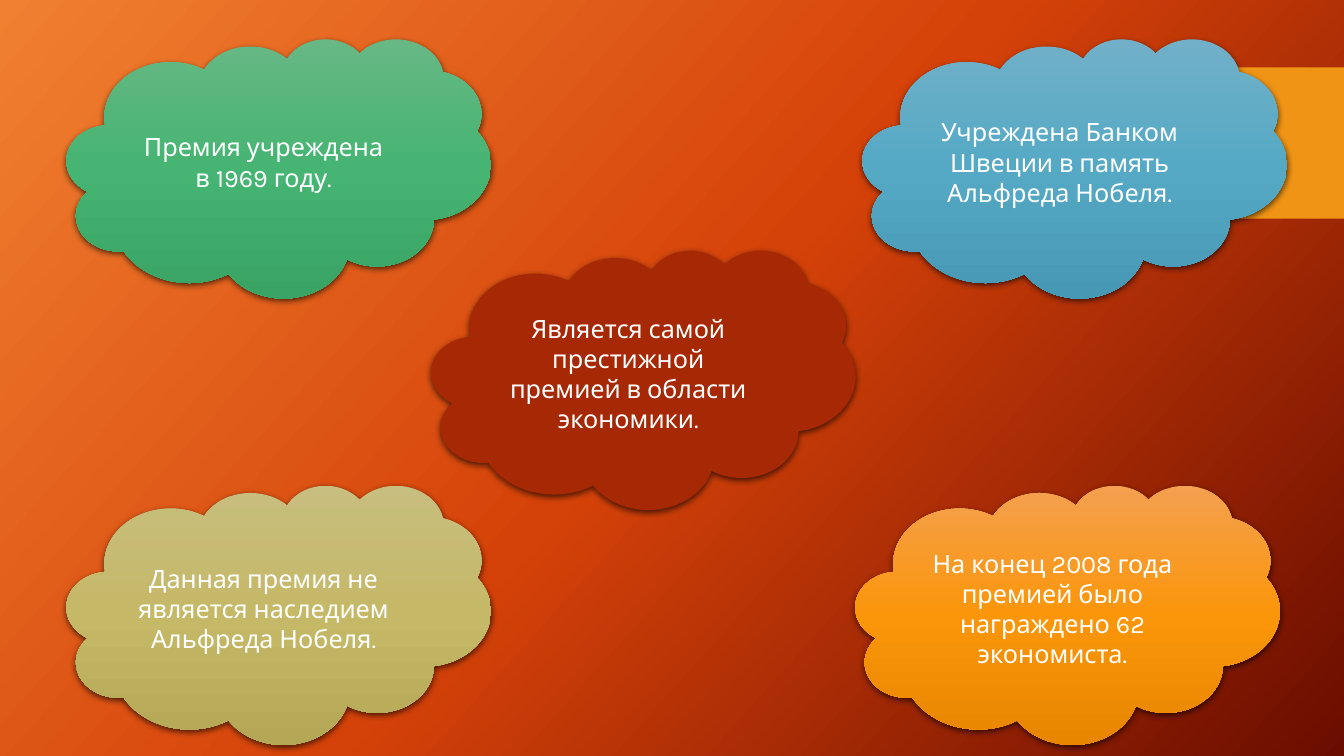
from copy import deepcopy
from dataclasses import dataclass

from lxml.etree import SubElement
from pptx import Presentation
from pptx.dml.color import RGBColor
from pptx.dml.fill import FillFormat
from pptx.enum.shapes import MSO_SHAPE
from pptx.enum.text import MSO_ANCHOR, PP_ALIGN
from pptx.oxml.ns import qn
from pptx.shapes.autoshape import Shape
from pptx.slide import Slide
from pptx.util import Cm, Pt


@dataclass(frozen=True)
class Theme:
    font: str = "Karla"
    size: int = 18
    text: str = "FFFFFF"
    shade: str = "000000"
    tab: str = "F09415"
    back: tuple[str, ...] = ("F18031", "D54209", "6A0D00")
    orange: tuple[str, ...] = ("F4A050", "FB960A", "E88600")
    sand: tuple[str, ...] = ("C8BE7F", "C5B867", "B4A756")
    blue: tuple[str, ...] = ("71B0C8", "55A9C5", "4798B4")
    green: tuple[str, ...] = ("67B884", "46B472", "3AA464")
    red: tuple[str, ...] = ("A62805",)


@dataclass(frozen=True)
class Cloud:
    left: float
    top: float
    fill: tuple[str, ...]
    text: str


THEME = Theme()
WIDE, HIGH = 10.69, 6.53  # cloud size in cm
LEFT, UPPER, LOWER = 1.68, 0.97, 12.22

CLOUDS = (
    Cloud(21.56, LOWER, THEME.orange,
          "На конец 2008 года премией было награждено 62 экономиста."),
    Cloud(LEFT, LOWER, THEME.sand,
          "Данная премия не является наследием Альфреда Нобеля."),
    Cloud(21.74, UPPER, THEME.blue,
          "Учреждена Банком Швеции в память Альфреда Нобеля."),
    Cloud(LEFT, UPPER, THEME.green, "Премия учреждена в 1969 году."),
    Cloud(10.87, 6.3, THEME.red,
          "Является самой престижной премией в области экономики."),
)


def paint(fill: FillFormat, tones: tuple[str, ...], angle: int = 90) -> None:
    """Fill with one tone, or with three tones along a clockwise angle."""
    if len(tones) == 1:
        fill.solid()
        fill.fore_color.rgb = RGBColor.from_string(tones[0])
        return
    fill.gradient()
    fill.gradient_angle = 360 - angle
    first = fill.gradient_stops[0]._gs
    first.addnext(deepcopy(first))
    for stop, tone, place in zip(fill.gradient_stops, tones, (0, 0.5, 1)):
        stop.color.rgb = RGBColor.from_string(tone)
        stop.position = place


def shade(shape: Shape) -> None:
    """Give the shape a soft shadow straight below it."""
    effects = shape._element.spPr.find(qn("a:effectLst"))
    outer = SubElement(effects, qn("a:outerShdw"), blurRad=str(Pt(4.5)),
                       dist=str(Pt(1.5)), dir="5400000", algn="ctr",
                       rotWithShape="0")
    tone = SubElement(outer, qn("a:srgbClr"), val=THEME.shade)
    SubElement(tone, qn("a:alpha"), val="63000")


def add_form(slide: Slide, kind: MSO_SHAPE, left: float, top: float,
             wide: float, high: float, tones: tuple[str, ...]) -> Shape:
    shape = slide.shapes.add_shape(kind, Cm(left), Cm(top), Cm(wide), Cm(high))
    shape.shadow.inherit = False
    shape.line.fill.background()
    paint(shape.fill, tones)
    return shape


def add_cloud(slide: Slide, cloud: Cloud) -> None:
    shape = add_form(slide, MSO_SHAPE.CLOUD, cloud.left, cloud.top,
                     WIDE, HIGH, cloud.fill)
    shade(shape)
    frame = shape.text_frame
    frame.word_wrap = True
    frame.vertical_anchor = MSO_ANCHOR.MIDDLE
    para = frame.paragraphs[0]
    para.text = cloud.text
    para.alignment = PP_ALIGN.CENTER
    para.font.name = THEME.font
    para.font.size = Pt(THEME.size)
    para.font.color.rgb = RGBColor.from_string(THEME.text)


def main() -> None:
    deck = Presentation()
    deck.slide_width, deck.slide_height = Cm(33.87), Cm(19.05)
    slide = deck.slides.add_slide(deck.slide_layouts[6])

    # Background and the tab at the right edge
    paint(slide.background.fill, THEME.back, 42)
    add_form(slide, MSO_SHAPE.RECTANGLE, 29.42, 1.7, 4.45, 3.81, (THEME.tab,))

    # Facts about the prize
    for cloud in CLOUDS:
        add_cloud(slide, cloud)

    deck.save("out.pptx")


if __name__ == "__main__":
    main()
